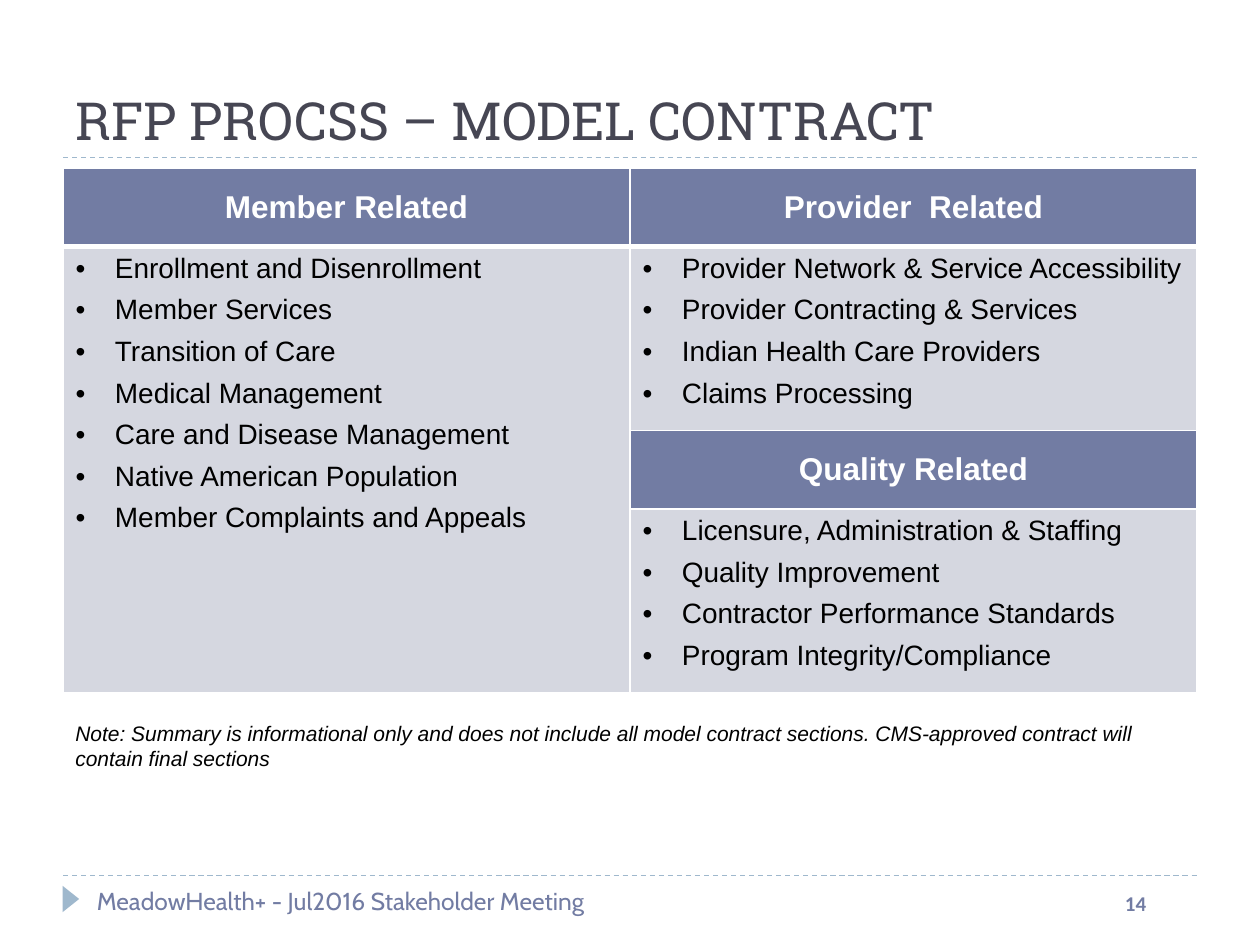
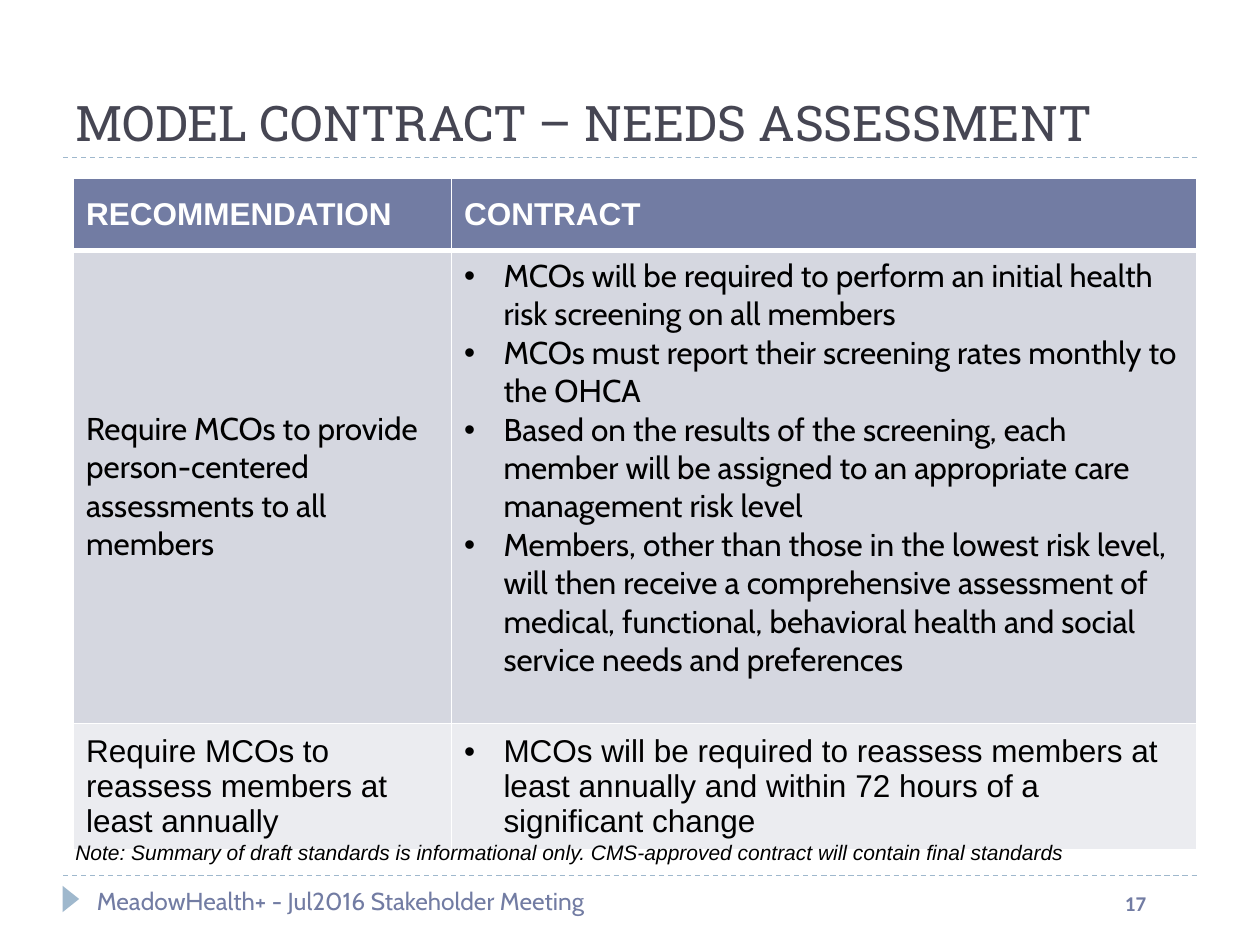
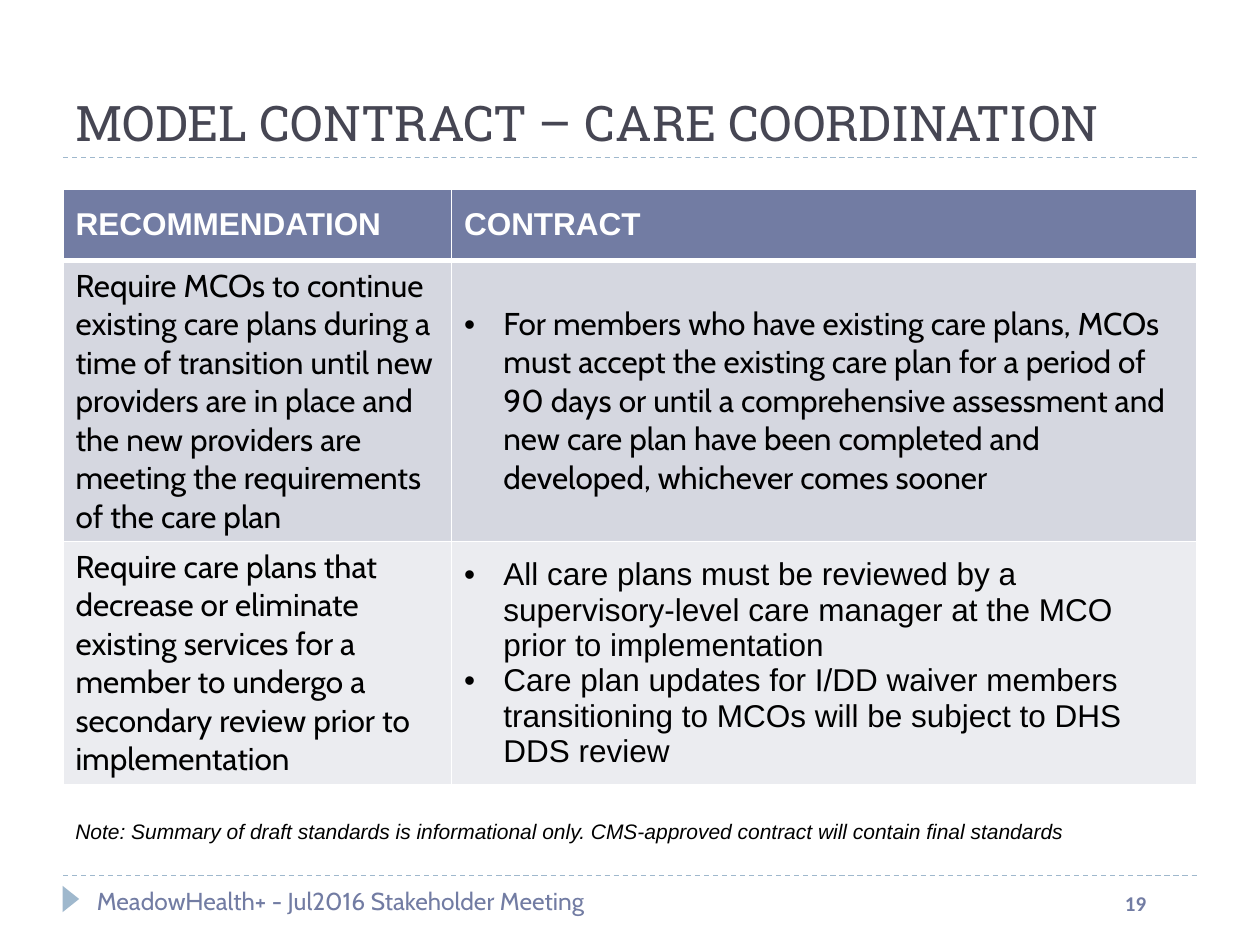
from lxml import etree
from pptx import Presentation
from pptx.dml.color import RGBColor
from pptx.enum import dml, shapes, text
from pptx.oxml import ns
from pptx.util import Pt

INK = RGBColor(0x46, 0x46, 0x53)
INDIGO = RGBColor(0x72, 0x7C, 0xA3)
SKY = RGBColor(0x9F, 0xB8, 0xCD)
BAND = RGBColor(0xD5, 0xD7, 0xE0)
PALE = RGBColor(0xEB, 0xEC, 0xF0)
WHITE = RGBColor(0xFF, 0xFF, 0xFF)
BLACK = RGBColor(0, 0, 0)
SANS, HUMANIST, SLAB, NUMERALS = "Arial", "Cabin", "Roboto Slab", "Calibri"
MIDDLE, TOP = text.MSO_ANCHOR.MIDDLE, text.MSO_ANCHOR.TOP
LEFT, CENTER = text.PP_ALIGN.LEFT, text.PP_ALIGN.CENTER
MEETING = "MeadowHealth+ - Jul2016 Stakeholder Meeting"
DRAFT_NOTE = ("Note: Summary of draft standards is informational only. "
              "CMS-approved contract will contain final standards")


class Deck:
    def __init__(self):
        self.prs = Presentation()
        self.prs.slide_width, self.prs.slide_height = Pt(720), Pt(540)
        self.slide = None

    def start(self, title, number, size):
        self.slide = self.prs.slides.add_slide(self.prs.slide_layouts[5])
        heading = self.slide.shapes.title
        heading.left, heading.top, heading.width, heading.height = Pt(36), Pt(12), Pt(648), Pt(78)
        frame = heading.text_frame
        frame.auto_size = text.MSO_AUTO_SIZE.NONE
        frame.vertical_anchor = text.MSO_ANCHOR.BOTTOM
        frame.paragraphs[0].alignment = LEFT
        self.run(frame.paragraphs[0], title, SLAB, size, INK)
        for y in (500.4, 90):
            self.rule(y)
        self.marker()
        self.box(635.76, 505.44, 42, 29, str(number), NUMERALS, 12, INDIGO, bold=True)
        self.box(48.24, 502.56, 402, 37, MEETING, HUMANIST, 14, INDIGO)

    def run(self, paragraph, words, font, size, color, bold=False, italic=False):
        run = paragraph.add_run()
        run.text = words
        run.font.name, run.font.size = font, Pt(size)
        run.font.bold, run.font.italic = bold, italic
        run.font.color.rgb = color

    def rule(self, y):
        rule = self.slide.shapes.add_connector(
            shapes.MSO_CONNECTOR.STRAIGHT, Pt(36), Pt(y), Pt(684), Pt(y))
        rule.line.color.rgb = SKY
        rule.line.width = Pt(0.75)
        rule.line.dash_style = dml.MSO_LINE.DASH
        etree.SubElement(rule._element.spPr, ns.qn("a:effectLst"))

    def marker(self):
        marker = self.slide.shapes.add_shape(
            shapes.MSO_SHAPE.ISOSCELES_TRIANGLE, Pt(33), Pt(509), Pt(15), Pt(9.4))
        marker.rotation = 90
        marker.shadow.inherit = False
        marker.fill.solid()
        marker.fill.fore_color.rgb = SKY
        marker.line.fill.background()

    def box(self, x, y, width, height, words, font, size, color, **style):
        frame = self.slide.shapes.add_textbox(Pt(x), Pt(y), Pt(width), Pt(height)).text_frame
        frame.word_wrap = True
        self.run(frame.paragraphs[0], words, font, size, color, **style)

    def note(self, y, height, words):
        self.box(36, y, 642, height, words, SANS, 12, BLACK, italic=True)

    def table(self, x, y, widths, heights):
        table = self.slide.shapes.add_table(
            len(heights), len(widths), Pt(x), Pt(y), Pt(sum(widths)), Pt(sum(heights))).table
        for column, width in zip(table.columns, widths):
            column.width = Pt(width)
        for index, (row, height) in enumerate(zip(table.rows, heights)):
            row.height = Pt(height)
            for cell in row.cells:
                self.borders(cell, L=1, R=1, T=3 if index == 1 else 1, B=3 if index == 0 else 1)
        return table

    def borders(self, cell, **weights):
        properties = cell._tc.get_or_add_tcPr()
        for side, weight in weights.items():
            line = etree.SubElement(properties, ns.qn("a:ln" + side), w=str(Pt(weight)))
            fill = etree.SubElement(line, ns.qn("a:solidFill"))
            etree.SubElement(fill, ns.qn("a:srgbClr"), val=str(WHITE))

    def paint(self, cell, color, anchor):
        cell.fill.solid()
        cell.fill.fore_color.rgb = color
        cell.vertical_anchor = anchor

    def header(self, cell, words, align=LEFT):
        self.paint(cell, INDIGO, MIDDLE)
        paragraph = cell.text_frame.paragraphs[0]
        paragraph.alignment = align
        self.run(paragraph, words, SANS, 18, WHITE, bold=True)

    def statement(self, cell, words, font, fill):
        self.paint(cell, fill, MIDDLE)
        self.run(cell.text_frame.paragraphs[0], words, font, 18, BLACK)

    def bullets(self, cell, items, font, fill, size=18, after=0, anchor=MIDDLE):
        self.paint(cell, fill, anchor)
        frame = cell.text_frame
        for index, item in enumerate(items):
            paragraph = frame.add_paragraph() if index else frame.paragraphs[0]
            paragraph.space_after = Pt(after)
            properties = paragraph._p.get_or_add_pPr()
            properties.set("marL", str(Pt(22.5)))
            properties.set("indent", str(-Pt(22.5)))
            etree.SubElement(properties, ns.qn("a:buFont"), typeface=SANS)
            etree.SubElement(properties, ns.qn("a:buChar"), char="•")
            self.run(paragraph, item, font, size, BLACK)

    def comparison(self, x, y, widths, heights, rows):
        table = self.table(x, y, widths, heights)
        for column, words in enumerate(("RECOMMENDATION", "CONTRACT")):
            self.header(table.cell(0, column), words)
        for index, (advice, advice_font, terms, terms_font) in enumerate(rows, 1):
            fill = BAND if index % 2 else PALE
            self.statement(table.cell(index, 0), advice, advice_font, fill)
            self.bullets(table.cell(index, 1), terms, terms_font, fill)
        return table


def model_contract(deck):
    deck.start("RFP PROCSS – MODEL CONTRACT", 14, 30)
    sections = deck.table(36, 96, [324, 324], [45, 105, 45, 105])
    sections.cell(1, 0).merge(sections.cell(3, 0))
    groups = [
        (0, 0, "Member Related", [
            "Enrollment and Disenrollment", "Member Services", "Transition of Care",
            "Medical Management", "Care and Disease Management",
            "Native American Population", "Member Complaints and Appeals"]),
        (0, 1, "Provider  Related", [
            "Provider Network & Service Accessibility", "Provider Contracting & Services",
            "Indian Health Care Providers", "Claims Processing"]),
        (2, 1, "Quality Related", [
            "Licensure, Administration & Staffing", "Quality Improvement",
            "Contractor Performance Standards", "Program Integrity/Compliance"]),
    ]
    for row, column, name, items in groups:
        deck.header(sections.cell(row, column), name, CENTER)
        deck.bullets(sections.cell(row + 1, column), items, SANS, BAND, 16, 6, TOP)
    deck.note(408, 36, "Note: Summary is informational only and does not include all model "
                       "contract sections. CMS-approved contract will contain final sections")


def needs_assessment(deck):
    deck.start("MODEL CONTRACT – NEEDS ASSESSMENT", 17, 28)
    standards = deck.comparison(42, 102, [216, 426], [41, 270.5, 67.5], [
        ("Require MCOs to provide person-centered assessments to all members", HUMANIST, [
            "MCOs will be required to perform an initial health risk screening on all members",
            "MCOs must report their screening rates monthly to the OHCA",
            "Based on the results of the screening, each member will be assigned to an "
            "appropriate care management risk level",
            "Members, other than those in the lowest risk level, will then receive a "
            "comprehensive assessment of medical, functional, behavioral health and social "
            "service needs and preferences"], HUMANIST),
        ("Require MCOs to reassess members at least annually", SANS, [
            "MCOs will be required to reassess members at least annually and within 72 hours "
            "of a significant change"], SANS),
    ])
    standards.cell(1, 1).margin_bottom = Pt(25)
    deck.note(476, 22, DRAFT_NOTE)


def care_coordination(deck):
    deck.start("MODEL CONTRACT – CARE COORDINATION", 19, 28)
    deck.comparison(36, 108, [222, 426], [41, 160.5, 139], [
        ("Require MCOs to continue existing care plans during a time of transition until new "
         "providers are in place and the new providers are meeting the requirements of the "
         "care plan", HUMANIST, [
             "For members who have existing care plans, MCOs must accept the existing care plan "
             "for a period of 90 days or until a comprehensive assessment and new care plan "
             "have been completed and developed, whichever comes sooner"], HUMANIST),
        ("Require care plans that decrease or eliminate existing services for a member to "
         "undergo a secondary review prior to implementation", HUMANIST, [
             "All care plans must be reviewed by a supervisory-level care manager at the MCO "
             "prior to implementation",
             "Care plan updates for I/DD waiver members transitioning to MCOs will be subject "
             "to DHS DDS review"], SANS),
    ])
    deck.note(464.4, 22, DRAFT_NOTE)


def main():
    deck = Deck()
    model_contract(deck)
    needs_assessment(deck)
    care_coordination(deck)
    deck.prs.save("out.pptx")


if __name__ == "__main__":
    main()
